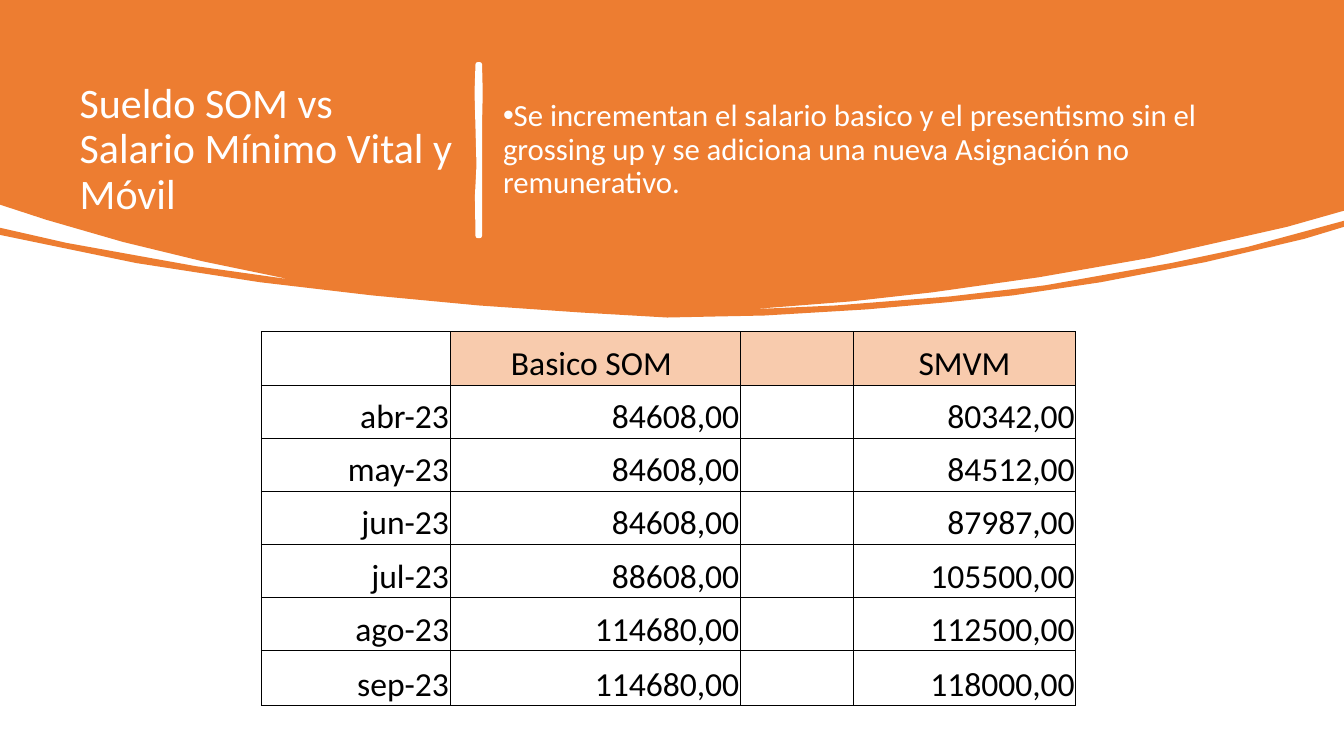
import pptx
import pptx.dml.color
import pptx.enum.text
import pptx.oxml
import pptx.oxml.ns
import pptx.util

Pt = pptx.util.Pt
RGBColor = pptx.dml.color.RGBColor
Align = pptx.enum.text.PP_ALIGN
Anchor = pptx.enum.text.MSO_ANCHOR

ORANGE = RGBColor(0xED, 0x7D, 0x31)
PEACH = RGBColor(0xF8, 0xCB, 0xAD)
WHITE = RGBColor(0xFF, 0xFF, 0xFF)
BLACK = RGBColor(0x00, 0x00, 0x00)

# Edges of the banner, clockwise from the top left corner
TOP = [(0, 0), (960, 0)]
DOME_RIGHT = [(960, 150.5), (919.4, 162), (820.8, 184.3), (742.3, 198),
              (666, 208.8), (607.7, 215.3), (535, 221)]
STRIPE_TOP_RIGHT = [(596.9, 218.2), (679, 211.7), (746.6, 203.8),
                    (836.6, 187.9), (891, 176.4), (960, 157.7)]
STRIPE_BOTTOM = [(960, 162), (931.7, 170.6), (861.1, 187.2), (786.2, 201.6),
                 (723.6, 211), (675.4, 216), (619.2, 221), (545.8, 225.4),
                 (509.8, 226.1), (476.6, 226.8), (414.7, 223.2), (342, 218.2),
                 (265.7, 211), (185.8, 201.6), (97.2, 187.9), (0, 167.8)]
STRIPE_TOP_LEFT = [(0, 162.7), (47.5, 173.5), (139.7, 190.1), (205.9, 199.4)]
DOME_LEFT = [(203, 198.7), (145, 186.7), (87.8, 172.8), (33.1, 157), (0, 146.2)]
BANNER = (TOP + DOME_RIGHT + STRIPE_TOP_RIGHT + STRIPE_BOTTOM
          + STRIPE_TOP_LEFT + DOME_LEFT)

# Hand-drawn divider: right edge down, left edge up
DIVIDER = [(342.7, 46), (343.2, 66), (342.7, 89), (342.7, 131), (342.7, 168.5),
           (341.3, 168.5), (340.9, 140), (342, 118), (340.6, 66), (341.3, 46)]

SALARIES = [
    ("", "Basico SOM ", "", "SMVM"),
    ("abr-23", "84608,00", "", "80342,00"),
    ("may-23", "84608,00", "", "84512,00"),
    ("jun-23", "84608,00", "", "87987,00"),
    ("jul-23", "88608,00", "", "105500,00"),
    ("ago-23", "114680,00", "", "112500,00"),
    ("sep-23", "114680,00", "", "118000,00"),
]
COLUMN_WIDTHS = [134.6, 207.4, 80.6, 159.1]
ROW_HEIGHTS = [37.9] * 6 + [39.6]


def write_text(frame, text, *, font, size, color, align=Align.LEFT,
               anchor=Anchor.MIDDLE, line_spacing=None, space_after=0):
    frame.word_wrap = True
    frame.vertical_anchor = anchor
    paragraph = frame.paragraphs[0]
    paragraph.alignment = align
    paragraph.line_spacing = line_spacing
    paragraph.space_before = Pt(0)
    paragraph.space_after = Pt(space_after)
    run = paragraph.add_run()
    run.text = text
    run.font.name = font
    run.font.size = Pt(size)
    run.font.color.rgb = color
    return paragraph


class SlideBuilder:
    font = "Calibri"

    def __init__(self, presentation):
        self.slide = presentation.slides.add_slide(presentation.slide_layouts[1])

    def outline(self, points, fill, line_width=0):
        start, *corners = [(Pt(x), Pt(y)) for x, y in points]
        builder = self.slide.shapes.build_freeform(*start)
        builder.add_line_segments(corners, close=True)
        shape = builder.convert_to_shape()
        shape.shadow.inherit = False
        shape.fill.solid()
        shape.fill.fore_color.rgb = fill
        if line_width:
            shape.line.color.rgb = fill
            shape.line.width = Pt(line_width)
        else:
            shape.line.fill.background()

    def placeholder(self, index, text, left, top, width, height, size, **text_format):
        shape = self.slide.placeholders[index]
        shape.element.getparent().append(shape.element)  # bring to front
        shape.left, shape.top = Pt(left), Pt(top)
        shape.width, shape.height = Pt(width), Pt(height)
        shape.text_frame.auto_size = pptx.enum.text.MSO_AUTO_SIZE.NONE
        return write_text(shape.text_frame, text, font=self.font, size=size,
                          color=WHITE, line_spacing=0.9, **text_format)

    def bullet(self, paragraph, indent):
        properties = paragraph._p.get_or_add_pPr()
        properties.set("marL", "0")
        properties.set("indent", str(Pt(indent)))
        properties.append(pptx.oxml.parse_xml(
            f'<a:buChar {pptx.oxml.ns.nsdecls("a")} char="•"/>'))

    def cell_borders(self, cell, widths):
        properties = cell._tc.get_or_add_tcPr()
        for side, width in widths.items():
            properties.append(pptx.oxml.parse_xml(
                f'<a:ln{side} {pptx.oxml.ns.nsdecls("a")} w="{Pt(width)}">'
                f'<a:solidFill><a:srgbClr val="{BLACK}"/></a:solidFill></a:ln{side}>'))

    def table(self, rows, left, top, column_widths, row_heights):
        last_row, last_column = len(rows) - 1, len(column_widths) - 1
        table = self.slide.shapes.add_table(
            len(rows), len(column_widths), Pt(left), Pt(top),
            Pt(sum(column_widths)), Pt(sum(row_heights))).table
        table.first_row = table.horz_banding = False
        for column, width in zip(table.columns, column_widths):
            column.width = Pt(width)
        for row, height in zip(table.rows, row_heights):
            row.height = Pt(height)
        for r, values in enumerate(rows):
            for c, text in enumerate(values):
                cell = table.cell(r, c)
                self.cell_borders(cell, {
                    "L": 1 if c == 0 else 0.5,
                    "R": 1 if c == last_column else 0.5,
                    "T": 1 if r == 0 else 0.5,
                    "B": 1 if r == last_row else 0.5,
                })
                if r == 0 and c > 0:
                    cell.fill.solid()
                    cell.fill.fore_color.rgb = PEACH
                else:
                    cell.fill.background()
                if not text:
                    continue
                cell.margin_left = cell.margin_right = cell.margin_top = Pt(0.7)
                cell.margin_bottom = Pt(0)
                write_text(cell.text_frame, text, font=self.font, size=24, color=BLACK,
                           align=Align.RIGHT if r else Align.CENTER)
                cell.vertical_anchor = Anchor.BOTTOM


def main():
    presentation = pptx.Presentation()
    presentation.slide_width, presentation.slide_height = Pt(960), Pt(540)
    builder = SlideBuilder(presentation)

    # Banner with title, divider and comment
    builder.outline(BANNER, ORANGE)
    builder.placeholder(0, "Sueldo SOM vs Salario Mínimo Vital y Móvil",
                        49.7, 49.7, 283.7, 115.2, size=30)
    builder.outline(DIVIDER, WHITE, line_width=3.25)
    comment = builder.placeholder(
        1, "Se incrementan el salario basico y el presentismo sin el grossing up "
        "y se adiciona una nueva Asignación no remunerativo.",
        352.1, 49.7, 557.3, 115.2, size=22, space_after=6)
    builder.bullet(comment, indent=-18)

    # Salary comparison
    builder.table(SALARIES, 186.8, 237, COLUMN_WIDTHS, ROW_HEIGHTS)

    presentation.save("out.pptx")


if __name__ == "__main__":
    main()
